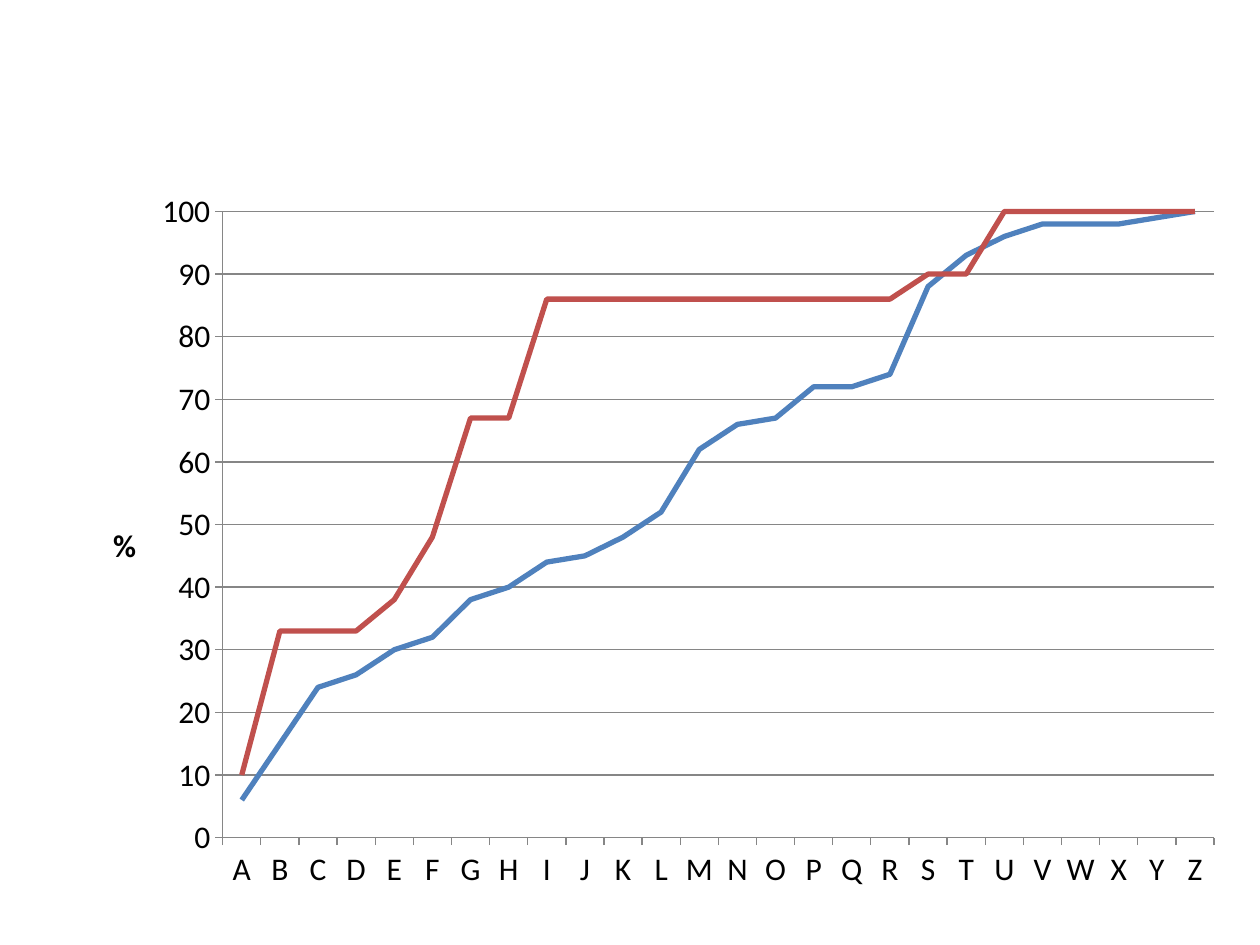
import pptx
import pptx.chart.data
import pptx.dml.color
import pptx.enum.chart
import pptx.oxml
import pptx.oxml.ns
import pptx.util
from pptx.util import Cm

COLORS = {"first": "4F81BD", "second": "C0504D", "text": "000000", "line": "868686"}
CATEGORIES = list("ABCDEFGHIJKLMNOPQRSTUVWXYZ")
SERIES = {
    "Series 1": ("first", [6, 15, 24, 26, 30, 32, 38, 40, 44, 45, 48, 52, 62,
                           66, 67, 72, 72, 74, 88, 93, 96, 98, 98, 98, 99, 100]),
    "Series 2": ("second", [10] + [33] * 3 + [38, 48, 67, 67] + [86] * 10
                 + [90, 90] + [100] * 6),
}
FONT = {"name": "Calibri", "size": pptx.util.Pt(18)}
VALUE_SCALE = {"minimum_scale": 0, "maximum_scale": 100, "major_unit": 10,
               "has_major_gridlines": True, "has_title": True}


def rgb(name):
    return pptx.dml.color.RGBColor.from_string(COLORS[name])


def set_all(obj, values):
    for key, value in values.items():
        setattr(obj, key, value)


def style_font(font, **extra):
    set_all(font, {**FONT, **extra})
    font.color.rgb = rgb("text")


def style_line(line, color, width):
    line.color.rgb = rgb(color)
    line.width = pptx.util.Pt(width)


def set_layout(parent, **fractions):
    """Place a chart part by fractions of the chart's size."""
    for old in parent.xpath("c:layout"):
        parent.remove(old)
    inner = '<c:layoutTarget val="inner"/>' if "w" in fractions else ""
    modes = "".join(f'<c:{k}Mode val="edge"/>' for k in "xy")
    sizes = "".join(f'<c:{k} val="{v}"/>' for k, v in fractions.items())
    layout = pptx.oxml.parse_xml(
        f'<c:layout {pptx.oxml.ns.nsdecls("c")}><c:manualLayout>'
        f"{inner}{modes}{sizes}</c:manualLayout></c:layout>")
    parent.insert(len(parent.xpath("c:tx")), layout)


def add_percent_title(axis):
    title = axis.axis_title
    p = title.text_frame.paragraphs[0]
    r = p.add_run()
    r.text = "%"
    style_font(r.font, bold=True)
    title.element.xpath(".//a:bodyPr")[0].set("rot", "0")
    set_layout(title.element, x=0.02, y=0.47)


def add_cumulative_chart(slide, left, top, width, height):
    data = pptx.chart.data.CategoryChartData()
    data.categories = CATEGORIES
    for name, (_, values) in SERIES.items():
        data.add_series(name, values)
    chart = slide.shapes.add_chart(pptx.enum.chart.XL_CHART_TYPE.LINE,
                                   left, top, width, height, data).chart
    set_all(chart, {"has_legend": False, "has_title": False})
    style_font(chart.font)
    chart.plots[0].vary_by_categories = False
    for s in chart.plots[0].series:
        s.smooth = False
        style_line(s.format.line, SERIES[s.name][0], 3)

    set_all(chart.value_axis, VALUE_SCALE)
    chart.category_axis.has_major_gridlines = False
    for axis in (chart.category_axis, chart.value_axis):
        axis.major_tick_mark = pptx.enum.chart.XL_TICK_MARK.OUTSIDE
        style_font(axis.tick_labels.font)
        style_line(axis.format.line, "line", 0.75)
    style_line(chart.value_axis.major_gridlines.format.line, "line", 0.75)
    add_percent_title(chart.value_axis)
    set_layout(chart.element.xpath(".//c:plotArea")[0],
               x=0.12, y=0.05, w=0.86, h=0.86)


def main():
    prs = pptx.Presentation()
    set_all(prs, {"slide_width": Cm(25.4), "slide_height": Cm(19.05)})
    slide = prs.slides.add_slide(prs.slide_layouts[6])
    add_cumulative_chart(slide, Cm(1.7), Cm(3.53), Cm(23.24), Cm(14.68))
    prs.save("out.pptx")


if __name__ == "__main__":
    main()
